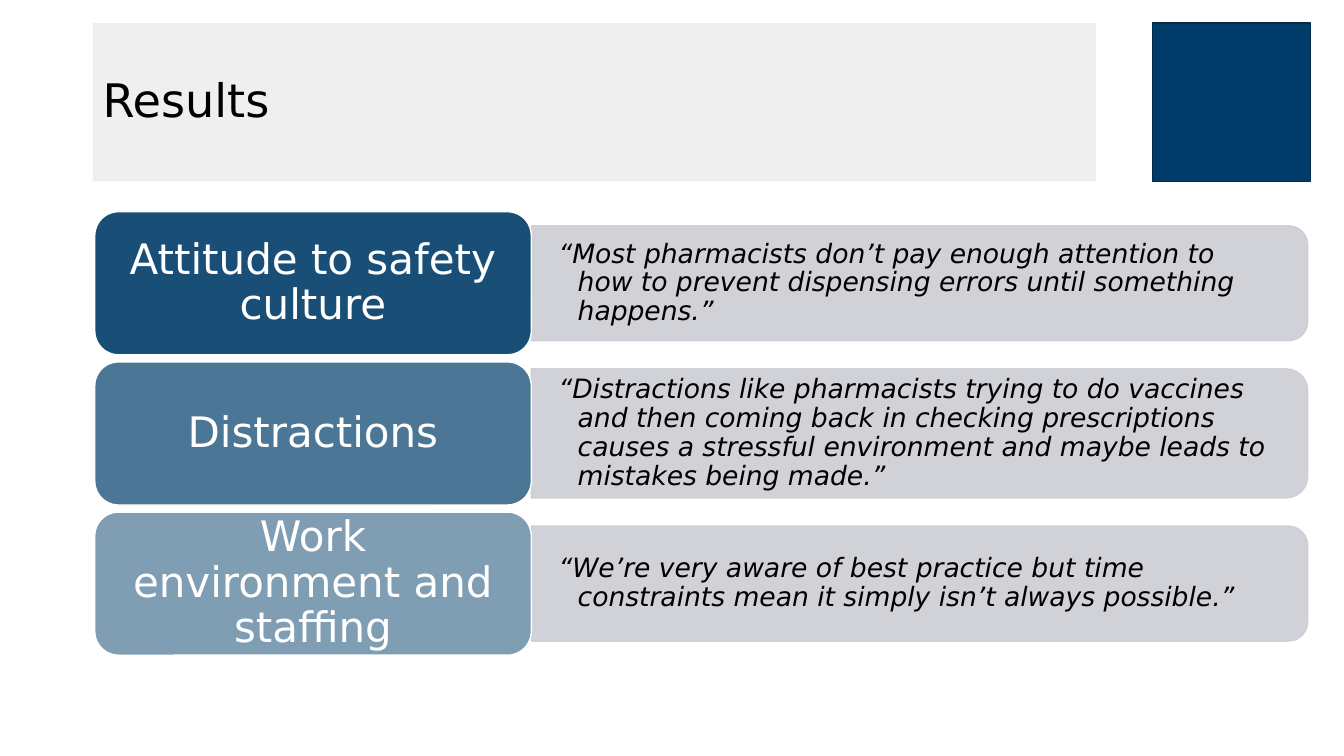
from lxml import etree
from pptx import Presentation
from pptx.dml.color import RGBColor
from pptx.enum import shapes, text
from pptx.oxml import ns
from pptx.util import Inches, Pt

COLORS = {
    "navy": "003C69",
    "navy edge": "002C4E",
    "title": "EFEFF0",
    "bar": "CCCED4",
    "white": "FFFFFF",
    "black": "000000",
}
FONT = "DejaVu Sans"
KIND = shapes.MSO_SHAPE

presentation = Presentation()
presentation.slide_width = Inches(13.33)
presentation.slide_height = Inches(7.5)
slide = presentation.slides.add_slide(presentation.slide_layouts[6])


def add_block(kind, box, fill, line=None, fill_alpha=100, line_alpha=100):
    shape = slide.shapes.add_shape(kind, *map(Inches, box))
    shape.shadow.inherit = False
    shape.fill.solid()
    shape.fill.fore_color.rgb = RGBColor.from_string(COLORS[fill])
    if line:
        shape.line.color.rgb = RGBColor.from_string(COLORS[line])
        shape.line.width = Pt(1)
    else:
        shape.line.fill.background()
    properties = shape._element.spPr
    for query, alpha in (("a:solidFill/a:srgbClr", fill_alpha),
                         ("a:ln/a:solidFill/a:srgbClr", line_alpha)):
        if alpha < 100:
            color = properties.xpath(query)[0]
            etree.SubElement(color, ns.qn("a:alpha"), val=str(alpha * 1000))
    return shape


def write(shape, wording, color, align, margins, **font):
    """Fill a shape with one vertically centred paragraph; margins are (side, top)."""
    frame = shape.text_frame
    frame.word_wrap = True
    frame.vertical_anchor = text.MSO_ANCHOR.MIDDLE
    frame.margin_left = frame.margin_right = Inches(margins[0])
    frame.margin_top = frame.margin_bottom = Inches(margins[1])
    paragraph = frame.paragraphs[0]
    paragraph.text = wording
    paragraph.alignment = align
    paragraph.line_spacing = 0.9
    run_font = paragraph.runs[0].font
    for name, value in {"name": FONT, **font}.items():
        setattr(run_font, name, value)
    run_font.color.rgb = RGBColor.from_string(COLORS[color])
    return paragraph


add_block(KIND.RECTANGLE, (11.43, 0.23, 1.57, 1.57), "navy", "navy edge")
title = add_block(KIND.RECTANGLE, (0.92, 0.23, 9.95, 1.57), "title")
write(title, "Results", "black", text.PP_ALIGN.LEFT, (0.1, 0.05), size=Pt(33))

# Theme, label opacity, bar height, quote
THEMES = [
    ("Attitude to safety culture", 90, 1.14,
     "“Most pharmacists don’t pay enough attention to how to prevent "
     "dispensing errors until something happens.”"),
    ("Distractions", 70, 1.28,
     "“Distractions like pharmacists trying to do vaccines and then coming back "
     "in checking prescriptions causes a stressful environment and maybe leads "
     "to mistakes being made.”"),
    ("Work environment and staffing", 50, 1.14,
     "“We’re very aware of best practice but time constraints mean it simply "
     "isn’t always possible.”"),
]
LABEL_LEFT, LABEL_WIDTH, LABEL_HEIGHT = 0.94, 4.33, 1.42
BAR_LEFT, BAR_LENGTH = LABEL_LEFT + LABEL_WIDTH, 7.7
FIRST_MIDDLE, ROW_STEP = 2.81, 1.49

for row, (theme, opacity, bar_height, quote) in enumerate(THEMES):
    middle = FIRST_MIDDLE + row * ROW_STEP

    # The bar is an upright shape turned so its rounded end faces right
    bar_box = (BAR_LEFT + (BAR_LENGTH - bar_height) / 2, middle - BAR_LENGTH / 2,
               bar_height, BAR_LENGTH)
    bar = add_block(KIND.ROUND_2_SAME_RECTANGLE, bar_box, "bar", "bar", 90, 90)
    bar.rotation = 90

    quote_height = bar_height - 0.12
    quote_box = slide.shapes.add_textbox(
        Inches(BAR_LEFT), Inches(middle - quote_height / 2), Inches(7.64), Inches(quote_height))
    paragraph = write(quote_box, quote, "black", text.PP_ALIGN.LEFT, (0.27, 0.14),
                      size=Pt(19), italic=True)
    indents = paragraph._p.get_or_add_pPr()
    indents.set("marL", str(Inches(0.19)))
    indents.set("indent", str(Inches(-0.19)))

    label_box = (LABEL_LEFT, middle - LABEL_HEIGHT / 2, LABEL_WIDTH, LABEL_HEIGHT)
    label = add_block(KIND.ROUNDED_RECTANGLE, label_box, "navy", "white", opacity)
    write(label, theme, "white", text.PP_ALIGN.CENTER, (0.19, 0.13), size=Pt(30))

presentation.save("out.pptx")
